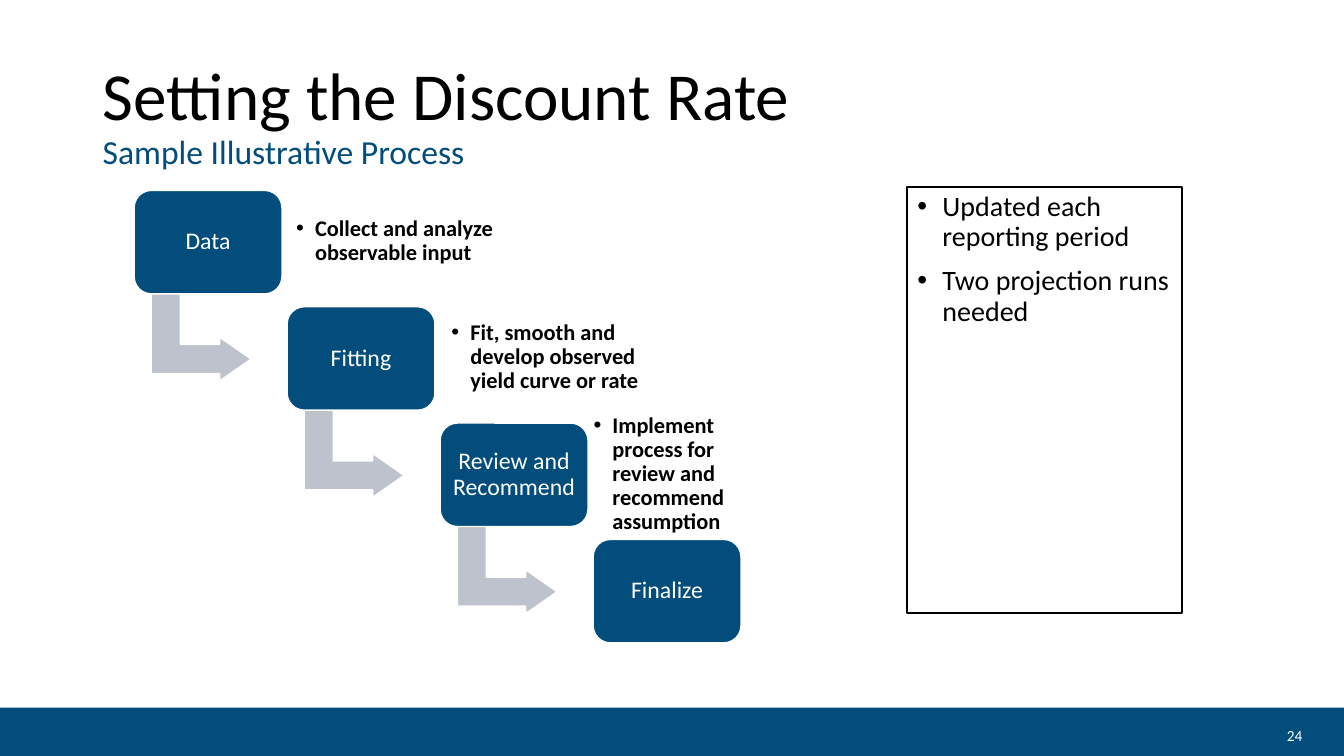
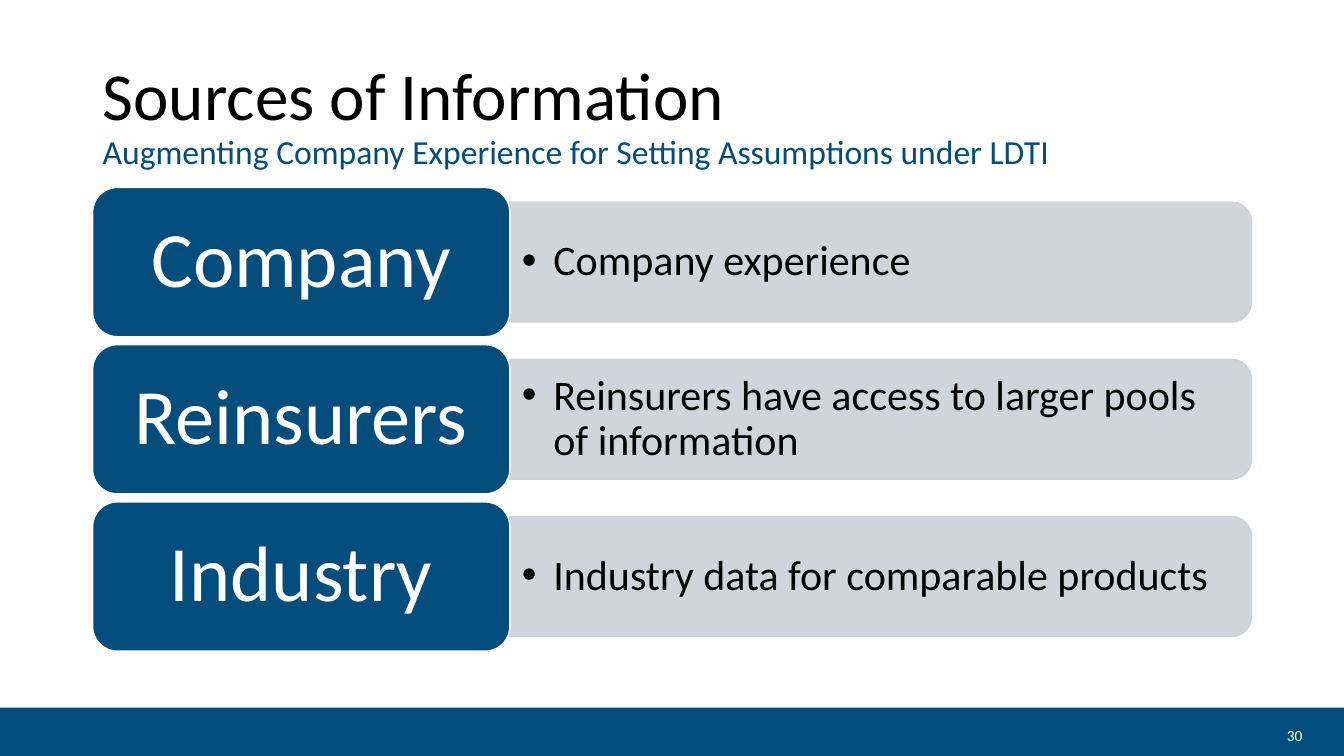
from lxml import etree
from pptx import Presentation
from pptx.dml.color import RGBColor
from pptx.enum.shapes import MSO_SHAPE
from pptx.enum.text import MSO_ANCHOR, MSO_AUTO_SIZE, PP_ALIGN
from pptx.oxml.ns import qn
from pptx.util import Pt

RECT = MSO_SHAPE.RECTANGLE
ROUND = MSO_SHAPE.ROUNDED_RECTANGLE
PANEL = MSO_SHAPE.ROUND_2_SAME_RECTANGLE
BENT = MSO_SHAPE.BENT_UP_ARROW
LEFT, CENTER, RIGHT = PP_ALIGN.LEFT, PP_ALIGN.CENTER, PP_ALIGN.RIGHT
TOP, MIDDLE = MSO_ANCHOR.TOP, MSO_ANCHOR.MIDDLE
FIXED = MSO_AUTO_SIZE.NONE

rgb = RGBColor.from_string
BLUE, GREY, PALE = "024D7C", "BDC2CC", "CCD0D7"
BLACK, WHITE = "000000", "FFFFFF"
FONT = "Calibri"


def add_shape(slide, kind, box, fill, line=None):
    sp = slide.shapes.add_shape(kind, *map(Pt, box))
    sp.shadow.inherit = False
    sp.fill.solid()
    sp.fill.fore_color.rgb = rgb(fill)
    if line:
        sp.line.color.rgb = rgb(line)
        sp.line.width = Pt(1)
    else:
        sp.line.fill.background()
    return sp


def write(tf, text, runs, align=LEFT, anchor=MIDDLE, inset=(7.2, 3.6), indent=0, bold=False):
    tf.text = text
    tf.word_wrap = True
    tf.auto_size = FIXED
    tf.vertical_anchor = anchor
    tf.margin_left = tf.margin_right = Pt(inset[0])
    tf.margin_top = tf.margin_bottom = Pt(inset[1])
    for i, p in enumerate(tf.paragraphs):
        p.alignment = align
        p.line_spacing = 0.9
        p.space_before = Pt(10 if i else 0)
        if indent:
            pPr = p._p.get_or_add_pPr()
            pPr.set("marL", str(Pt(indent)))
            pPr.set("indent", str(-Pt(indent)))
            etree.SubElement(pPr, qn("a:buFont"), typeface="Arial")
            etree.SubElement(pPr, qn("a:buChar"), char="•")
        for r, (size, color) in zip(p.runs, runs):
            r.font.name = FONT
            r.font.size = Pt(size)
            r.font.bold = bold
            r.font.color.rgb = rgb(color)


prs = Presentation()
prs.slide_width, prs.slide_height = Pt(960), Pt(540)
master = prs.slide_master
title = master.placeholders[0]
title.left, title.top, title.width, title.height = map(Pt, (66.2, 33.1, 828, 100.8))

pages = [
    (1, "Setting the Discount Rate", "Sample Illustrative Process", "24"),
    (5, "Sources of Information",
     "Augmenting Company Experience for Setting Assumptions under LDTI", "30"),
]
for layout, heading, subtitle, number in pages:
    s = prs.slides.add_slide(prs.slide_layouts[layout])
    write(s.shapes.title.text_frame, f"{heading}\v{subtitle}", [(48, BLACK), (24, BLUE)])
    tb = s.shapes.add_textbox(Pt(886.3), Pt(518.4), Pt(51.1), Pt(15.8))
    write(tb.text_frame, number, [(11, WHITE)], RIGHT)

process, sources = prs.slides

band = add_shape(process, RECT, (0, 505.4, 960, 34.6), BLUE)
master.shapes._spTree.insert(2, band._element)

notes = process.placeholders[1]
notes.left, notes.top, notes.width, notes.height = map(Pt, (648, 133.6, 196.6, 304))
notes.line.color.rgb = rgb(BLACK)
notes.line.width = Pt(1.5)
write(notes.text_frame, "Updated each reporting period\nTwo projection runs needed",
      [(20, BLACK)], anchor=TOP, indent=18)

steps = [
    ("Data", "Collect and analyze observable input", (206.6, 142.6, 167.8, 59.8)),
    ("Fitting", "Fit, smooth and develop observed yield curve or rate",
     (317.5, 226.8, 176.4, 56.9)),
    ("Review and Recommend", "Implement process for review and recommend assumption",
     (419, 307.4, 141.8, 62.6)),
    ("Finalize", None, None),
]
for i, (name, detail, box) in enumerate(steps):
    x, y = 95.8 + 109.3 * i, 136 + 83.1 * i
    if detail:
        arrow = add_shape(process, BENT, (x + 16.6, y + 69.2, 62.6, 71.3), GREY, WHITE)
        arrow.rotation = 90
        for n, value in enumerate((0.33, 0.25, 0.36)):
            arrow.adjustments[n] = value
    sp = add_shape(process, ROUND, (x, y, 105.6, 73.9), BLUE, WHITE)
    write(sp.text_frame, name, [(17, WHITE)], CENTER, inset=(4.5, 4.5))
    if detail:
        tb = process.shapes.add_textbox(*map(Pt, box))
        write(tb.text_frame, detail, [(16, BLACK)], inset=(5, 5), indent=13.5, bold=True)

rows = [
    ("Company", "Company experience"),
    ("Reinsurers", "Reinsurers have access to larger pools of information"),
    ("Industry", "Industry data for comparable products"),
]
for i, (name, detail) in enumerate(rows):
    y = 133.9 + 112.3 * i
    panel = add_shape(sources, PANEL, (586.1, y - 211.7, 85.7, 530), PALE, PALE)
    panel.rotation = 90
    for clr in panel._element.spPr.iter(qn("a:srgbClr")):
        etree.SubElement(clr, qn("a:alpha"), val="90000")
    tb = sources.shapes.add_textbox(Pt(364.2), Pt(y + 14.9), Pt(525.6), Pt(77))
    write(tb.text_frame, detail, [(30, BLACK)], inset=(8.6, 4.3), indent=22.5)
    sp = add_shape(sources, ROUND, (66.2, y, 298, 106.6), BLUE, WHITE)
    write(sp.text_frame, name, [(56, WHITE)], CENTER, inset=(16.6, 8.6))

prs.save("out.pptx")
